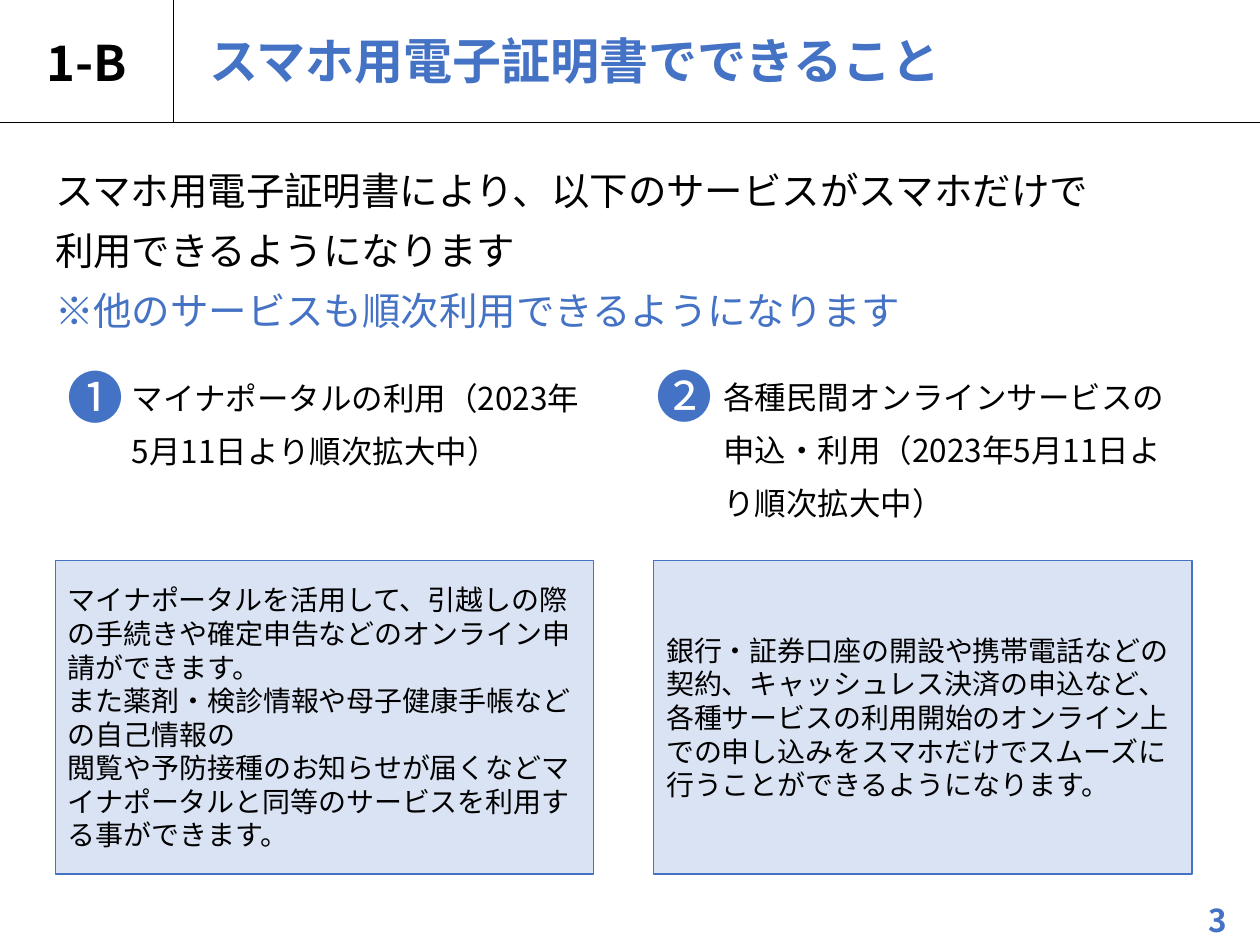
"""Build the slide on what the smartphone certificate can do."""
from pptx import Presentation, util as u
from pptx.dml.color import RGBColor
from pptx.enum import shapes, text
from pptx.oxml import xmlchemy as x

Cm, Pt = u.Cm, u.Pt
FONT = "Noto Sans CJK JP"
HUES = {"ink": "000000", "blue": "4472C4", "pale": "DAE3F3"}
FORM = shapes.MSO_SHAPE
MID = text.MSO_ANCHOR.MIDDLE
LEFT, CENTER = text.PP_ALIGN.LEFT, text.PP_ALIGN.CENTER


def hue(name):
    return RGBColor.from_string(HUES[name])


def write(shape, lines, size, tint="ink", bold=False, align=LEFT,
          gap=1.0, anchor=text.MSO_ANCHOR.TOP, wrap=True):
    frame = shape.text_frame
    frame.word_wrap = wrap
    frame.vertical_anchor = anchor
    for i, line in enumerate(lines):
        para = frame.add_paragraph() if i else frame.paragraphs[0]
        para.alignment = align
        para.line_spacing = gap
        run = para.add_run()
        run.text = line
        font = run.font
        font.size, font.bold, font.name = Pt(size), bold, FONT
        font.color.rgb = hue(tint)
        for tag in ("a:ea", "a:sym"):
            face = x.OxmlElement(tag)
            face.set("typeface", FONT)
            font._element.append(face)
    return frame


deck = Presentation()
deck.slide_width, deck.slide_height = Cm(25.4), Cm(19.05)
slide = deck.slides.add_slide(deck.slide_layouts[6])
items = slide.shapes

for ends in ((-0.1, 2.46, 25.4, 2.46), (3.5, 2.46, 3.5, 0)):
    rule = items.add_connector(shapes.MSO_CONNECTOR.STRAIGHT, *map(Cm, ends))
    rule.line.color.rgb = hue("ink")
    rule.line.width = Pt(0.5)
    rule._element.spPr.append(x.OxmlElement("a:effectLst"))

code = items.add_textbox(0, 0, Cm(3.5), Cm(2.49))
write(code, ["1-B"], 28, bold=True, align=CENTER, anchor=MID, wrap=False)

head = items.add_shape(FORM.ROUNDED_RECTANGLE, Cm(3.89), Cm(0.41), Cm(20.8), Cm(1.6))
head.shadow.inherit = False
head.fill.background()
head.line.fill.background()
write(head, ["スマホ用電子証明書でできること"], 28, "blue", True, anchor=MID)

lead = items.add_textbox(Cm(0.86), Cm(2.97), Cm(23.7), Cm(3.07))
frame = write(lead, ["スマホ用電子証明書により、以下のサービスがスマホだけで",
                     "利用できるようになります",
                     "※他のサービスも順次利用できるようになります"], 22, gap=1.3)
frame.paragraphs[-1].runs[0].font.color.rgb = hue("blue")

cards = [
    (1.12, 1.12, 2.41, 7.21, "❶",
     ["マイナポータルの利用（2023年5月11日より順次拡大中）"],
     ["マイナポータルを活用して、引越しの際の手続きや確定申告などのオンライン申請ができます。",
      "また薬剤・検診情報や母子健康手帳などの自己情報の",
      "閲覧や予防接種のお知らせが届くなどマイナポータルと同等のサービスを利用する事ができます。"]),
    (13.18, 12.98, 14.33, 7.19, "❷",
     ["各種民間オンラインサービスの",
      "申込・利用（2023年5月11日より順次拡大中）"],
     ["銀行・証券口座の開設や携帯電話などの契約、キャッシュレス決済の申込など、",
      "各種サービスの利用開始のオンライン上での申し込みをスマホだけでスムーズに行うことができるようになります。"]),
]
for left, mark, title, top, sign, name, body in cards:
    badge = items.add_textbox(Cm(mark), Cm(top + 0.13), Cm(1.14), Cm(1.78))
    write(badge, [sign], 32, "blue", gap=0.9)
    label = items.add_textbox(Cm(title), Cm(top), Cm(9.8), Cm(2.92))
    write(label, name, 18, gap=1.4)
    panel = items.add_shape(FORM.RECTANGLE, Cm(left), Cm(11.3), Cm(10.85), Cm(6.32))
    panel.shadow.inherit = False
    panel.fill.solid()
    panel.fill.fore_color.rgb = hue("pale")
    panel.line.color.rgb = hue("blue")
    panel.line.width = Pt(0.75)
    write(panel, body, 16, anchor=MID)

page = items.add_textbox(Cm(23.75), Cm(18.06), Cm(1.6), Cm(0.99))
write(page, ["3"], 18, "blue", True, CENTER, anchor=MID)

deck.save("out.pptx")
